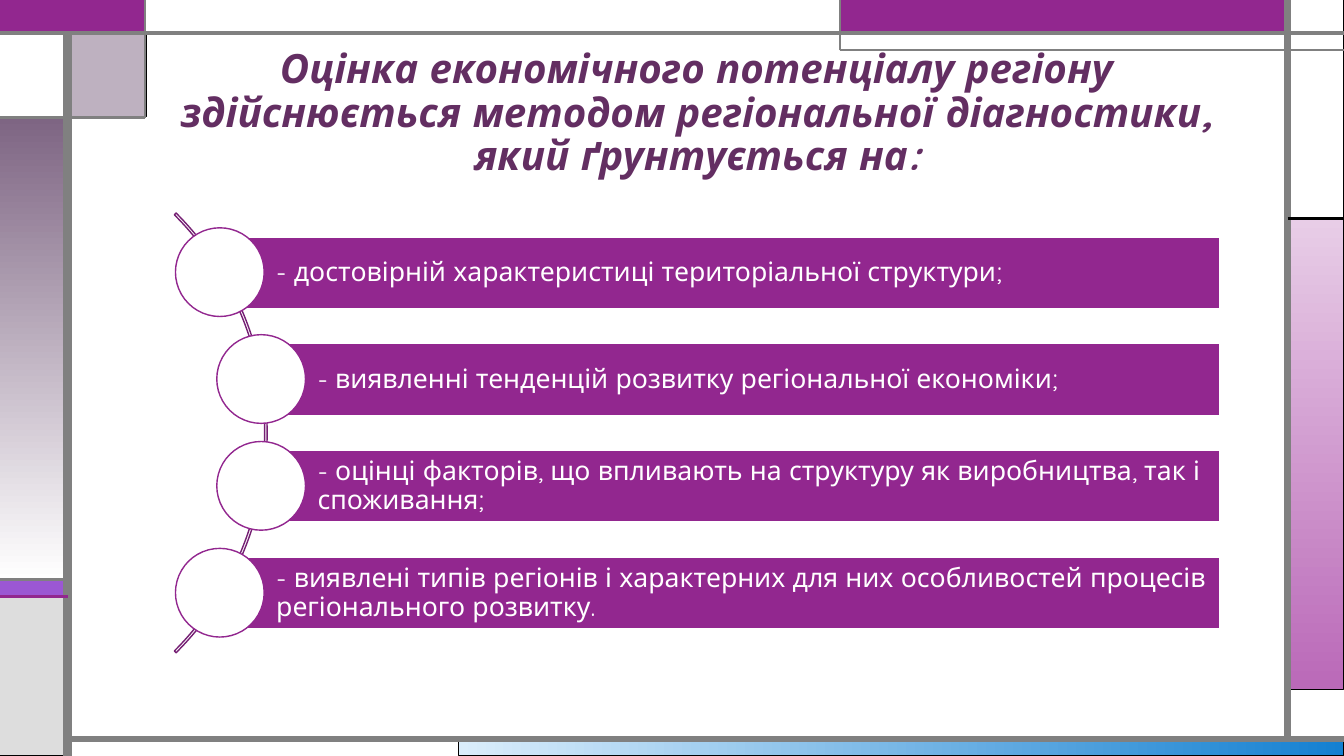
"""Slide on the regional diagnostics method: a mosaic frame and a curved list of four bases."""
from lxml.etree import SubElement
from pptx import Presentation
from pptx.dml.color import RGBColor
from pptx.enum.shapes import MSO_CONNECTOR, MSO_SHAPE
from pptx.enum.text import MSO_ANCHOR, PP_ALIGN
from pptx.oxml.ns import qn
from pptx.util import Inches, Pt

COLORS = {
    "white": "FFFFFF", "black": "000000", "gray": "808080", "light": "DDDDDD",
    "purple": "92278F", "violet": "9B57D3", "indigo": "755DD9", "mauve": "7E6583",
    "plum": "632E62", "arc": "751F73", "pink": "E8CDE7", "orchid": "BA69B8",
    "sky": "DAEDFB", "blue": "1480D1",
}
FONT = "Quicksand"
RGB = {name: RGBColor.from_string(value) for name, value in COLORS.items()}


def add_box(kind, box, fill, line, width):
    """Add a shape; fill is a colour name, a (start, end, angle) gradient or None."""
    s = shapes.add_shape(kind, *[Inches(v) for v in box])
    s.shadow.inherit = False
    if fill is None:
        s.fill.background()
    elif isinstance(fill, tuple):
        s.fill.gradient()
        s.fill.gradient_angle = fill[2]
        for stop, color, position in zip(s.fill.gradient_stops, fill, (0, 1)):
            stop.color.rgb = RGB[color]
            stop.position = position
    else:
        s.fill.solid()
        s.fill.fore_color.rgb = RGB[fill]
    s.line.color.rgb = RGB[line]
    s.line.width = Pt(width)
    return s


def write_text(s, text, size, color, align, anchor):
    """Put one wrapped paragraph into a shape."""
    tf = s.text_frame
    tf.word_wrap = True
    tf.vertical_anchor = anchor
    p = tf.paragraphs[0]
    p.text = text
    p.alignment = align
    p.line_spacing = 0.9
    p.font.name = FONT
    p.font.size = Pt(size)
    p.font.color.rgb = RGB[color]
    return p


prs = Presentation()
prs.slide_width, prs.slide_height = Inches(13.33), Inches(7.5)
shapes = prs.slides.add_slide(prs.slide_layouts[6]).shapes

tiles = [
    ((4.55, 7.33, 8.78, 0.17), ("sky", "blue", 0), "black", 0.75),
    ((12.77, 2.17, 0.56, 4.67), ("pink", "orchid", 270), "black", 0.75),
    ((0, 5.75, 0.67, 0.17), "violet", "black", 0.75),
    ((0, 5.92, 0.67, 1.58), "light", "black", 0.75),
    ((12.77, 0, 0.56, 2.17), "white", "black", 0.75),
    ((8.33, 0, 4.44, 0.33), "purple", "indigo", 0.75),
    ((0.67, 0.33, 0.78, 0.83), "mauve", "black", 0.75),
    ((0, 1.17, 0.67, 4.58), ("mauve", "white", 270), "black", 0.75),
    ((0, 0.33, 0.67, 0.83), "white", "black", 0.75),
    ((0, 0, 1.44, 0.33), "purple", "purple", 1.5),
    ((1.44, 0, 6.89, 0.33), "white", "gray", 0.75),
]
for box, fill, line, width in tiles:
    s = add_box(MSO_SHAPE.RECTANGLE, box, fill, line, width)
    if fill == "mauve":
        color = s.fill._xPr.find(qn("a:solidFill"))[0]
        SubElement(color, qn("a:alpha"), val="50000")

rules = [
    ((0.67, 7.5, 0.67, 0.33), "gray", 6),
    ((0.67, 7.33, 13.33, 7.33), "gray", 4.5),
    ((12.77, 7.33, 12.77, 0), "gray", 4.5),
    ((0, 0.33, 13.33, 0.33), "gray", 3),
    ((13.33, 0.5, 8.33, 0.5), "gray", 1.5),
    ((8.33, 0.5, 8.33, 0), "gray", 1.5),
    ((12.77, 2.17, 13.33, 2.17), "black", 2.25),
    ((1.44, 0, 1.44, 1.17), "gray", 1.5),
    ((1.44, 1.17, 0, 1.17), "gray", 2.25),
    ((0.67, 5.75, 0, 5.75), "gray", 2.25),
    ((0.67, 5.92, 0, 5.92), "purple", 2.25),
]
for ends, color, width in rules:
    s = shapes.add_connector(MSO_CONNECTOR.STRAIGHT, *[Inches(v) for v in ends])
    s.line.color.rgb = RGB[color]
    s.line.width = Pt(width)
    SubElement(s._element.spPr, qn("a:effectLst"))

title = shapes.add_textbox(Inches(1.66), Inches(0.58), Inches(10.5), Inches(1.25))
p = write_text(
    title,
    "Оцінка економічного потенціалу регіону здійснюється методом "
    "регіональної діагностики, який ґрунтується на:",
    28.8, "plum", PP_ALIGN.CENTER, MSO_ANCHOR.BOTTOM)
p.font.bold = p.font.italic = True

arc = add_box(MSO_SHAPE.BLOCK_ARC, (-3.52, 1.21, 6.17, 6.17), None, "arc", 1)
for i, value in enumerate((189, 27, 0.004)):
    arc.adjustments[i] = value

bases = [
    (2.18, "- достовірній характеристиці територіальної структури;"),
    (2.59, "- виявленні тенденцій розвитку регіональної економіки;"),
    (2.59, "- оцінці факторів, що впливають на структуру як виробництва, так і споживання;"),
    (2.18, "- виявлені типів регіонів і характерних для них особливостей процесів "
           "регіонального розвитку."),
]
BAR_RIGHT, BAR_HEIGHT, CIRCLE = 12.1, 0.71, 0.88
for i, (left, text) in enumerate(bases):
    top = 2.35 + 1.06 * i
    bar = add_box(MSO_SHAPE.RECTANGLE, (left, top, BAR_RIGHT - left, BAR_HEIGHT),
                  "purple", "white", 1)
    write_text(bar, text, 19, "white", PP_ALIGN.LEFT, MSO_ANCHOR.MIDDLE)
    tf = bar.text_frame
    tf.margin_left = Inches(0.56)
    tf.margin_top = tf.margin_right = tf.margin_bottom = Inches(0.05)
    add_box(MSO_SHAPE.OVAL, (left - CIRCLE / 2, top - 0.09, CIRCLE, CIRCLE),
            "white", "purple", 1)

prs.save("out.pptx")
